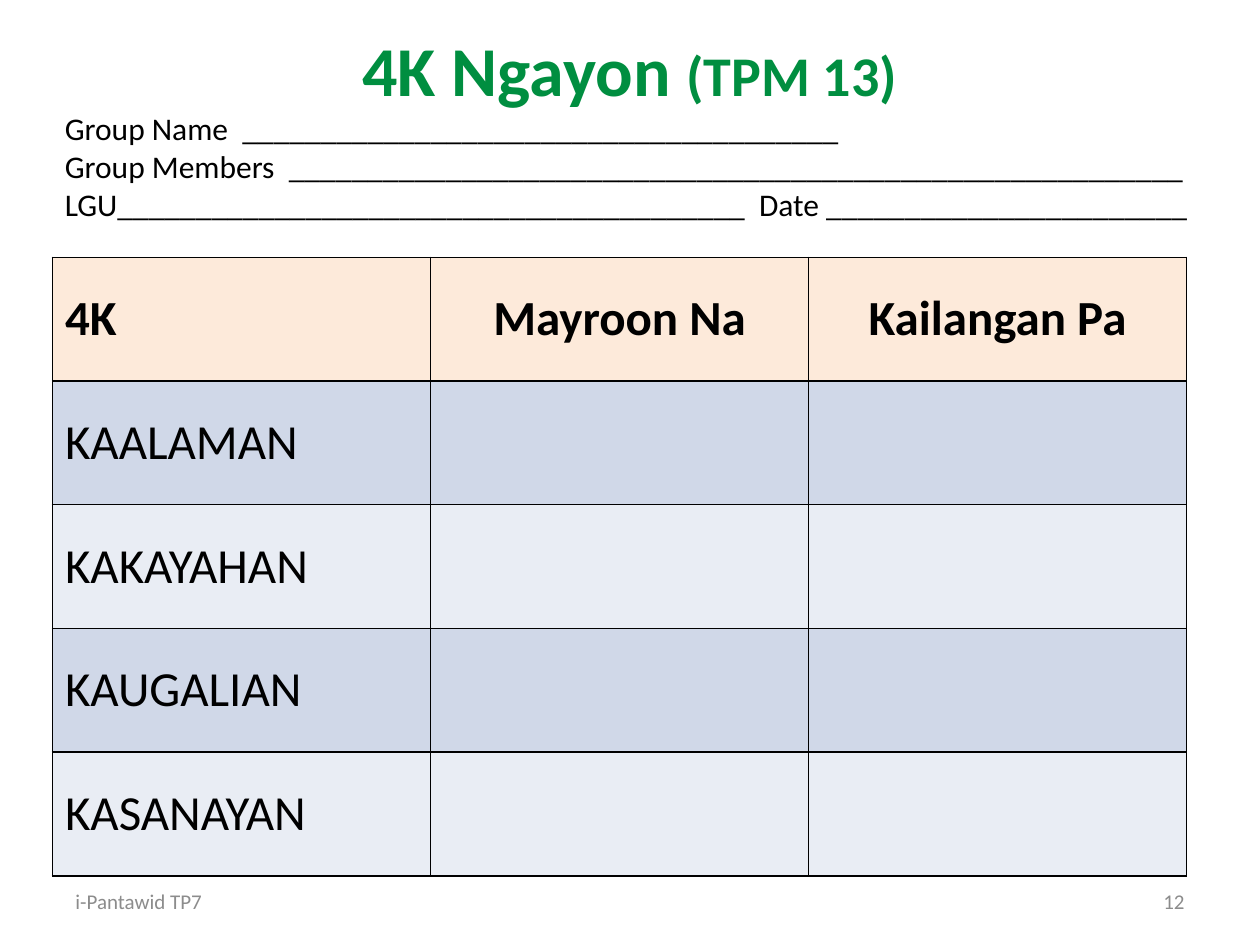
from dataclasses import dataclass

from lxml.etree import SubElement
from pptx import Presentation
from pptx.dml.color import RGBColor
from pptx.enum.text import MSO_ANCHOR, PP_ALIGN
from pptx.oxml.ns import qn
from pptx.util import Pt


@dataclass(frozen=True)
class Theme:
    font: str = "Calibri"
    title: str = "008E40"
    ink: str = "000000"
    muted: str = "8C8C8C"
    header: str = "FDEADA"
    bands: tuple = ("D0D8E8", "E9EDF4")
    title_size: int = 40
    subtitle_size: int = 32
    table_size: int = 28
    form_size: int = 18
    footer_size: int = 12
    border: int = 1


class SlideBuilder:
    def __init__(self, slide, theme):
        self.slide = slide
        self.theme = theme

    def run(self, p, text, size, color, bold=False):
        r = p.add_run()
        r.text = text
        r.font.name = self.theme.font
        r.font.size = Pt(size)
        r.font.bold = bold
        r.font.color.rgb = RGBColor.from_string(color)

    def text(self, box, lines, align=PP_ALIGN.LEFT, anchor=MSO_ANCHOR.MIDDLE, wrap=True):
        sp = self.slide.shapes.add_textbox(*map(Pt, box))
        tf = sp.text_frame
        tf.word_wrap = wrap
        tf.vertical_anchor = anchor
        for i, runs in enumerate(lines):
            p = tf.add_paragraph() if i else tf.paragraphs[0]
            p.alignment = align
            for r in runs:
                self.run(p, *r)

    def borders(self, cell):
        tc_pr = cell._tc.get_or_add_tcPr()
        for side in ("lnL", "lnR", "lnT", "lnB"):
            ln = SubElement(tc_pr, qn(f"a:{side}"), w=str(Pt(self.theme.border)))
            fill = SubElement(ln, qn("a:solidFill"))
            SubElement(fill, qn("a:srgbClr"), val=self.theme.ink)

    def table(self, box, rows):
        t = self.theme
        left, top, width, height = box
        shape = self.slide.shapes.add_table(len(rows), len(rows[0]), *map(Pt, box))
        table = shape.table
        for column in table.columns:
            column.width = Pt(width / len(rows[0]))
        for i, values in enumerate(rows):
            table.rows[i].height = Pt(height / len(rows))
            color = t.bands[(i - 1) % 2] if i else t.header
            for j, value in enumerate(values):
                cell = table.cell(i, j)
                self.borders(cell)
                cell.fill.solid()
                cell.fill.fore_color.rgb = RGBColor.from_string(color)
                cell.vertical_anchor = MSO_ANCHOR.MIDDLE
                if value:
                    p = cell.text_frame.paragraphs[0]
                    p.alignment = PP_ALIGN.CENTER if j else PP_ALIGN.LEFT
                    self.run(p, value, t.table_size, t.ink, i == 0)


def main():
    prs = Presentation()
    prs.slide_width, prs.slide_height = Pt(720), Pt(540)
    t = Theme()
    s = SlideBuilder(prs.slides.add_slide(prs.slide_layouts[6]), t)

    s.text((36, 0, 648, 78), [[
        ("4K Ngayon ", t.title_size, t.title, True),
        ("(TPM 13)", t.subtitle_size, t.title, True),
    ]], PP_ALIGN.CENTER)

    topics = ("KAALAMAN", "KAKAYAHAN", "KAUGALIAN", "KASANAYAN")
    s.table((30, 147, 648, 353.5),
            [("4K", "Mayroon Na", "Kailangan Pa")] + [(topic, "", "") for topic in topics])

    form = (
        "Group Name  ______________________________________",
        "Group Members  _________________________________________________________",
        "LGU________________________________________  Date _______________________",
    )
    s.text((30, 59, 662, 73), [[(line, t.form_size, t.ink)] for line in form],
           anchor=MSO_ANCHOR.TOP, wrap=False)

    for left, label, align in ((36, "i-Pantawid TP7", PP_ALIGN.LEFT),
                               (516, "12", PP_ALIGN.RIGHT)):
        s.text((left, 500.5, 168, 28.75), [[(label, t.footer_size, t.muted)]], align)

    prs.save("out.pptx")


if __name__ == "__main__":
    main()
